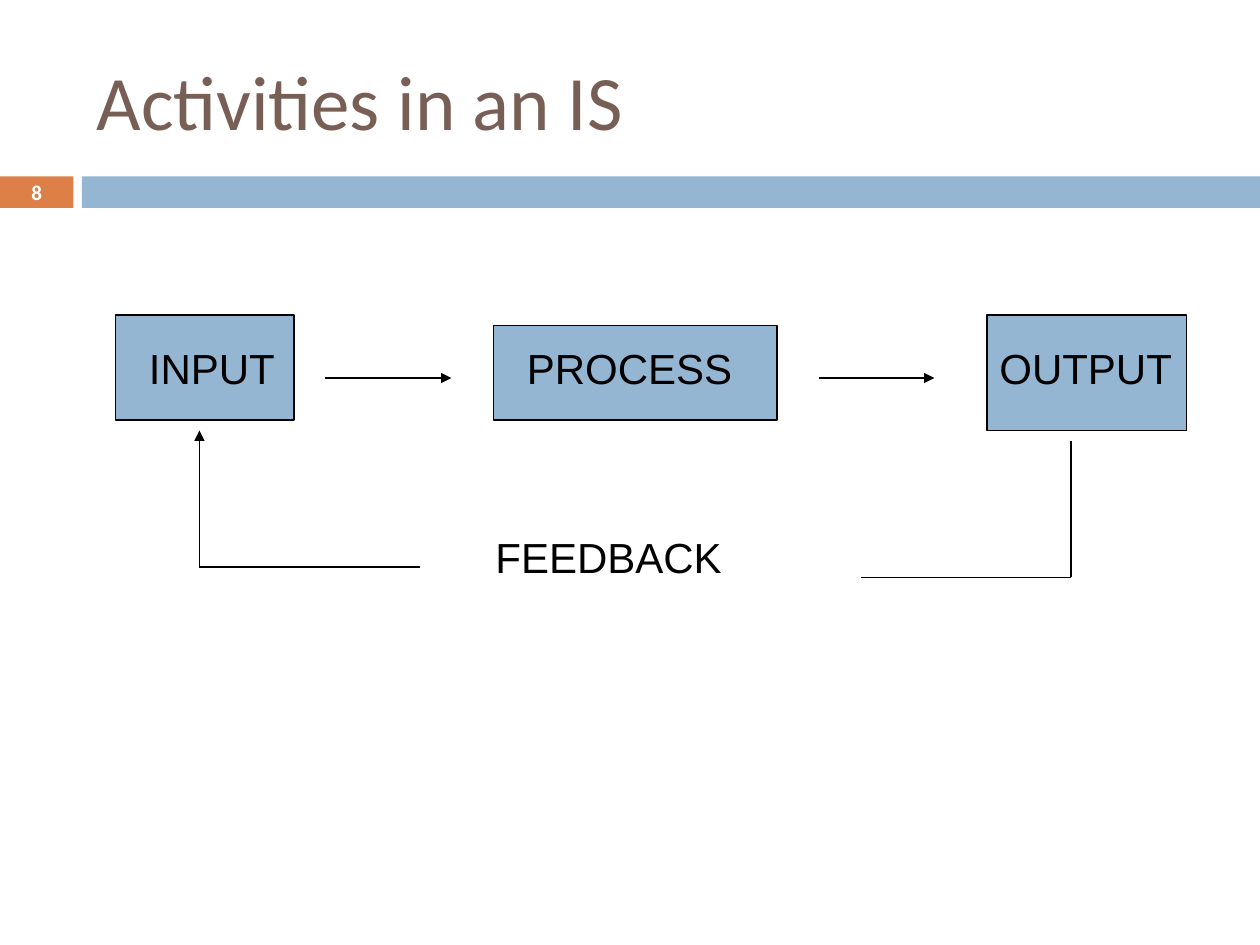
from lxml import etree
from pptx import Presentation
from pptx.dml.color import RGBColor
from pptx.enum.shapes import MSO_CONNECTOR, MSO_SHAPE
from pptx.enum.text import MSO_ANCHOR, MSO_AUTO_SIZE, PP_ALIGN
from pptx.oxml.ns import qn
from pptx.util import Pt

PX = 7620
RECT = MSO_SHAPE.RECTANGLE
STRAIGHT = MSO_CONNECTOR.STRAIGHT
MIDDLE = MSO_ANCHOR.MIDDLE
GROW = MSO_AUTO_SIZE.SHAPE_TO_FIT_TEXT
LEFT, CENTER = PP_ALIGN.LEFT, PP_ALIGN.CENTER

ORANGE = RGBColor(0xDD, 0x80, 0x47)
BLUE = RGBColor(0x94, 0xB6, 0xD2)
BROWN = RGBColor(0x77, 0x5F, 0x55)
BLACK = RGBColor(0, 0, 0)
WHITE = RGBColor(255, 255, 255)


def emu(*lengths):
    return [n * PX for n in lengths]


def add_rect(slide, box, fill, outline=None):
    sp = slide.shapes.add_shape(RECT, *emu(*box))
    sp.shadow.inherit = False
    sp.fill.solid()
    sp.fill.fore_color.rgb = fill
    if outline is None:
        sp.line.fill.background()
    else:
        sp.line.color.rgb = outline
        sp.line.width = Pt(0.75)


def set_text(tf, text, font, size, color, align=LEFT, bold=False):
    tf.word_wrap = True
    tf.text = text
    p = tf.paragraphs[0]
    p.alignment = align
    r = p.runs[0]
    r.font.name = font
    r.font.size = Pt(size)
    r.font.bold = bold
    r.font.color.rgb = color


def add_label(slide, box, text):
    tf = slide.shapes.add_textbox(*emu(*box)).text_frame
    set_text(tf, text, "Arial", 24, BLACK)
    tf.paragraphs[0].space_before = Pt(3)
    tf.auto_size = GROW


def add_line(slide, start, end, arrow=False):
    cxn = slide.shapes.add_connector(STRAIGHT, *emu(*start, *end))
    cxn.line.color.rgb = BLACK
    cxn.line.width = Pt(0.75)
    if arrow:
        etree.SubElement(cxn.line._get_or_add_ln(), qn("a:tailEnd"), type="triangle")
    etree.SubElement(cxn._element.spPr, qn("a:effectLst"))


def add_header(slide, box):
    x, y, w, h = box
    title = slide.shapes.title
    title.left, title.top, title.width, title.height = emu(x + 80, y + 30, 1070, 130)
    title.text_frame.vertical_anchor = MIDDLE
    set_text(title.text_frame, "Activities in an IS", "Calibri", 44, BROWN)
    band_y, band_h, tab_w, gap = y + h - 30, 30, 70, 8
    add_rect(slide, (x, band_y, tab_w, band_h), ORANGE)
    band_x = x + tab_w + gap
    add_rect(slide, (band_x, band_y, x + w - band_x, band_h), BLUE)
    tf = slide.shapes.add_textbox(*emu(x, band_y - 1, tab_w, band_h + 2)).text_frame
    tf.margin_left = tf.margin_right = tf.margin_top = tf.margin_bottom = 0
    tf.vertical_anchor = MIDDLE
    set_text(tf, "8", "Calibri", 12, WHITE, CENTER, True)


def add_flow(slide, box):
    x, y, w, h = box
    stages = [
        ("INPUT", (0, 0, 170, 100), 20, 150),
        ("PROCESS", (360, 10, 270, 90), 20, 240),
        ("OUTPUT", (830, 0, 190, 110), 0, 190),
    ]
    for text, (left, top, width, height), indent, text_w in stages:
        add_rect(slide, (x + left, y + top, width, height), BLUE, BLACK)
        add_label(slide, (x + left + indent, y + 20, text_w, 60), text)
    for start, end in [(200, 320), (670, 780)]:
        add_line(slide, (x + start, y + 60), (x + end, y + 60), True)


def add_feedback(slide, box):
    x, y, w, h = box
    right, bottom = x + w, y + h
    add_line(slide, (right, y + 10), (right, bottom))
    add_line(slide, (right, bottom), (right - 200, bottom))
    add_label(slide, (x + 270, y + 90, 320, 60), "FEEDBACK")
    add_line(slide, (x + 210, bottom - 10), (x, bottom - 10))
    add_line(slide, (x, bottom - 10), (x, y), True)


def main():
    prs = Presentation()
    prs.slide_width, prs.slide_height = emu(1200, 900)
    slide = prs.slides.add_slide(prs.slide_layouts[5])
    add_header(slide, (0, 0, 1200, 198))
    add_flow(slide, (110, 300, 1020, 110))
    add_feedback(slide, (190, 410, 830, 140))
    prs.save("out.pptx")


if __name__ == "__main__":
    main()
